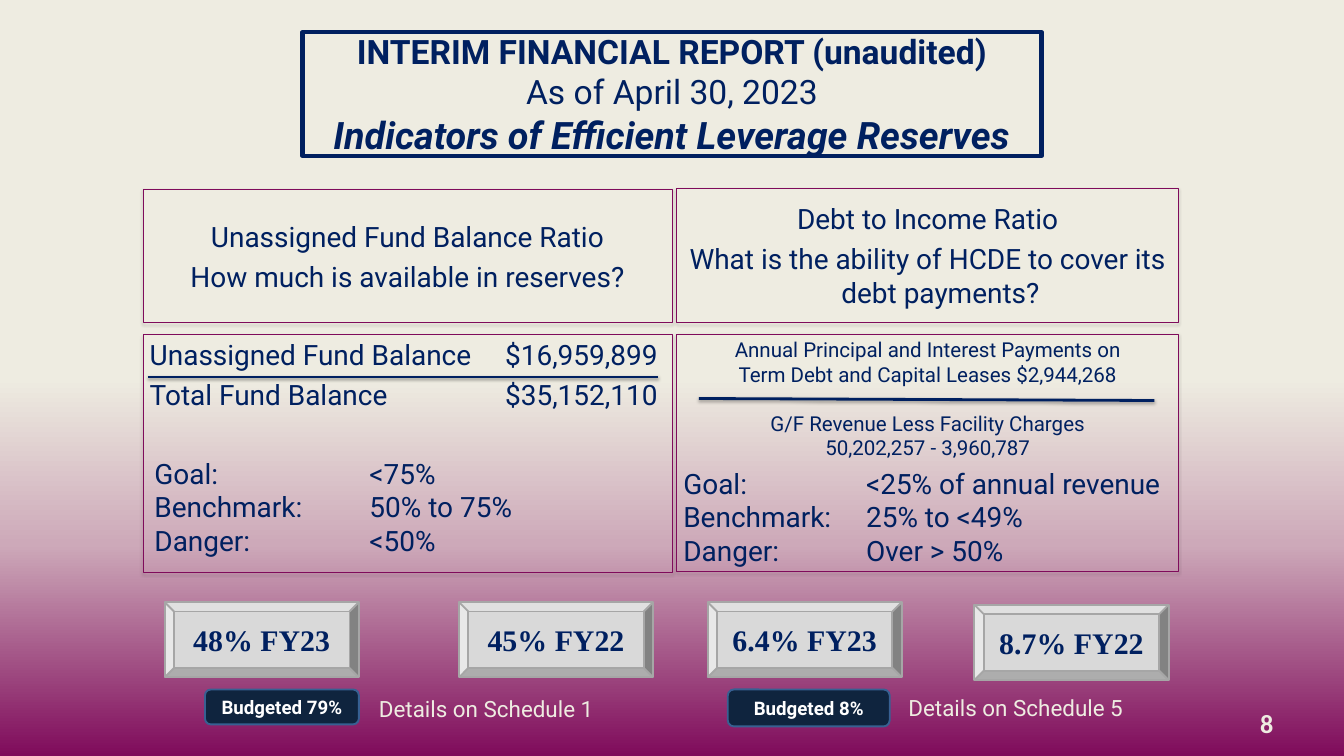
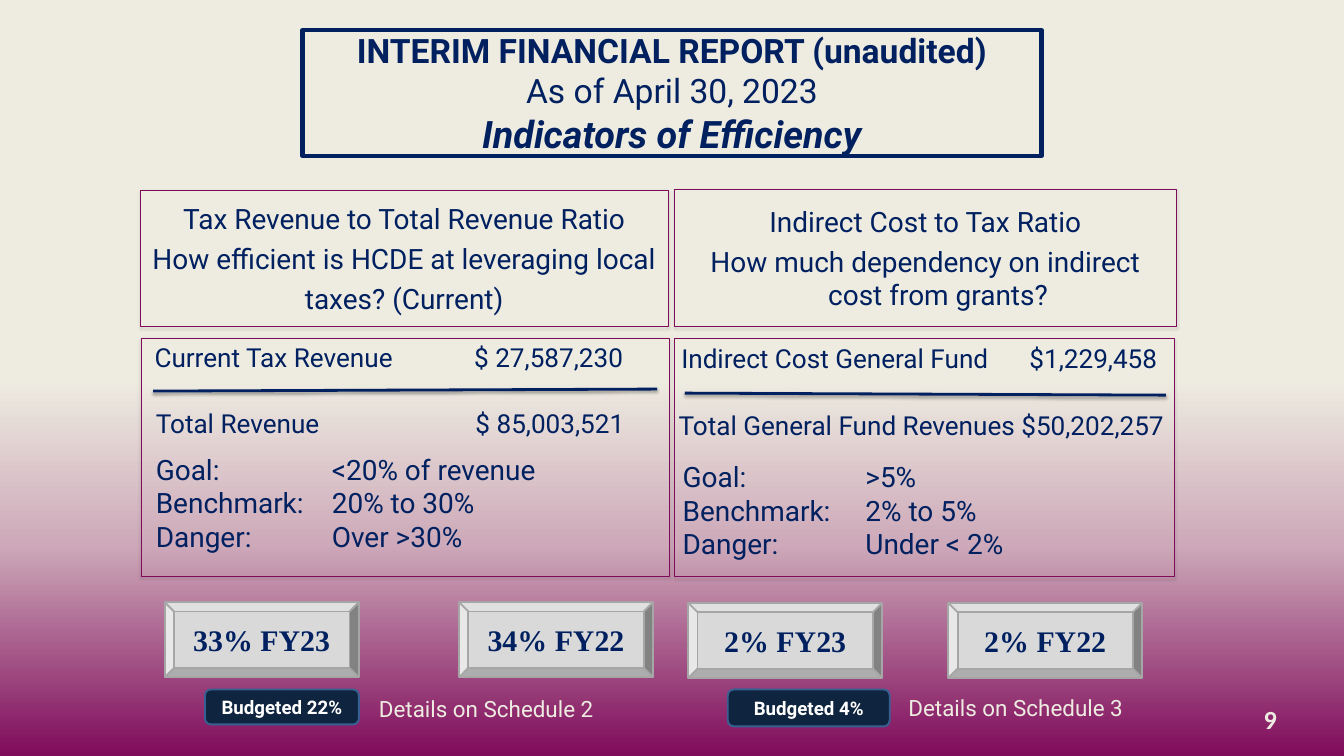
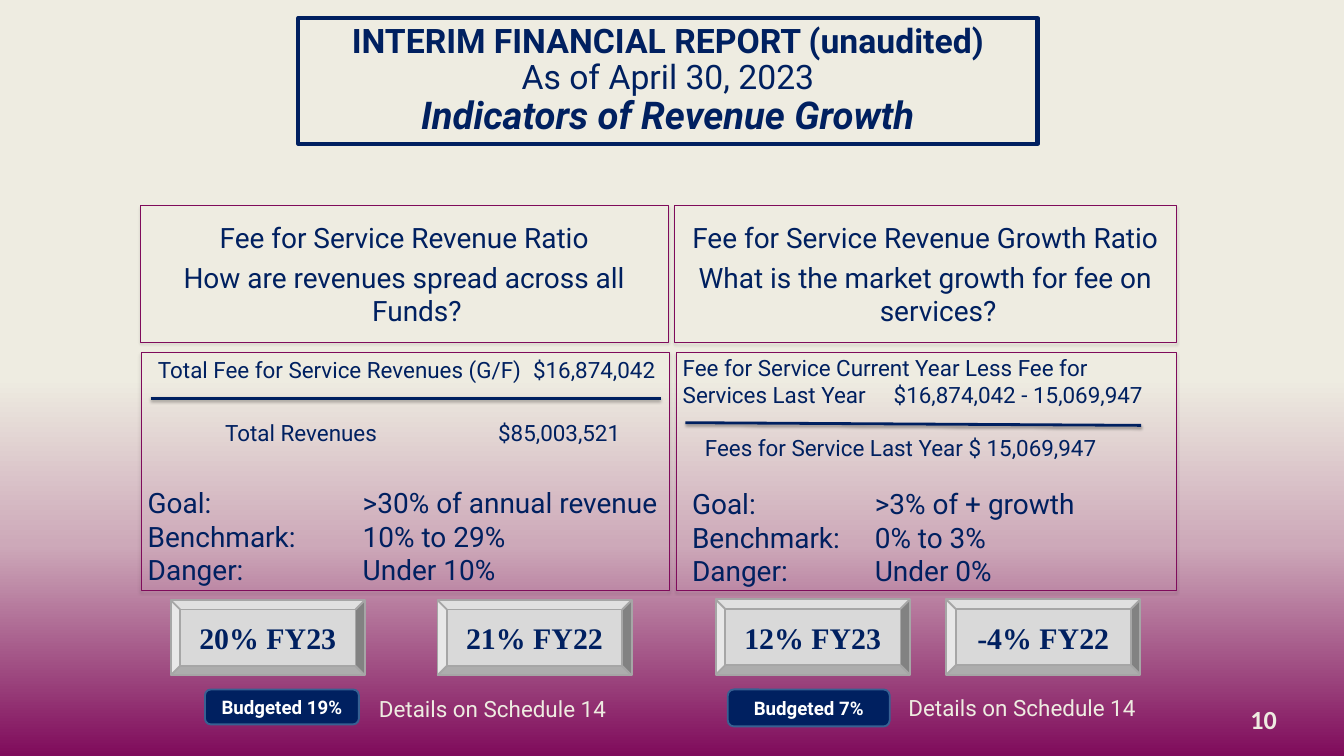
from dataclasses import dataclass

from lxml import etree
from pptx import Presentation
from pptx.dml.color import RGBColor
from pptx.enum.shapes import MSO_CONNECTOR, MSO_SHAPE
from pptx.enum.text import MSO_ANCHOR, MSO_AUTO_SIZE, PP_ALIGN
from pptx.oxml import parse_xml
from pptx.oxml.ns import qn
from pptx.util import Inches, Pt

RECT, BEVEL, ROUNDED = MSO_SHAPE.RECTANGLE, MSO_SHAPE.BEVEL, MSO_SHAPE.ROUNDED_RECTANGLE
STRAIGHT = MSO_CONNECTOR.STRAIGHT
LEFT, CENTER, RIGHT = PP_ALIGN.LEFT, PP_ALIGN.CENTER, PP_ALIGN.RIGHT
TOP, MIDDLE = MSO_ANCHOR.TOP, MSO_ANCHOR.MIDDLE

NAVY, CREAM, PLUM, WHITE = "002060", "EEECE1", "7F0B5B", "FFFFFF"
SILVER, GRAY, INK, STEEL = "D9D9D9", "A6A6A6", "0F243E", "376092"
BACKDROP = [(50, CREAM), (72, "CDA9B9"), (100, PLUM)]
SOFT_SHADOW = (35, 3.1, 1.8)  # opacity, blur, distance
DRAWING = "http://schemas.openxmlformats.org/drawingml/2006/main"
ROW_GAP = 6.5


@dataclass
class Row:
    text: str
    tabs: tuple = ()  # (position in inches, "l" or "r")
    before: float = 0


@dataclass
class Column:
    head: tuple
    questions: list
    body: tuple
    fraction: list
    rule: tuple  # both ends, relative to the body
    goals_at: tuple  # relative to the body
    goals: list
    goal_tab: float
    size: float = 30
    align: int = LEFT
    inset: float = 0.1
    note_at: tuple = ()  # relative to the body
    note: tuple = ()
    note_size: float = 28
    note_inset: float = 0.1


# ---- shared helpers ----
def color(hex_text):
    return RGBColor.from_string(hex_text)


def inches(values):
    return [Inches(value) for value in values]


def add_shadow(shape, shadow=None):
    """Give the shape this shadow, or an empty effect list."""
    effects = etree.SubElement(shape._element.spPr, qn("a:effectLst"))
    if shadow:
        opacity, blur, distance = shadow
        effects.append(parse_xml(
            f'<a:outerShdw xmlns:a="{DRAWING}" blurRad="{Pt(blur)}" dist="{Pt(distance)}" '
            f'dir="5400000" rotWithShape="0"><a:srgbClr val="000000">'
            f'<a:alpha val="{opacity * 1000}"/></a:srgbClr></a:outerShdw>'))


def set_line(shape, hex_text, width):
    shape.line.color.rgb = color(hex_text)
    shape.line.width = Pt(width)


def set_tabs(para, tabs):
    if tabs:
        tab_list = etree.SubElement(para._p.get_or_add_pPr(), qn("a:tabLst"))
        for position, side in tabs:
            etree.SubElement(tab_list, qn("a:tab"), pos=str(Inches(position)), algn=side)


def style_runs(para, size, hex_text=NAVY, bold=False, italic=False, font="Roboto"):
    for span in para.runs:
        span.font.name, span.font.size = font, Pt(size)
        span.font.bold, span.font.italic = bold, italic
        span.font.color.rgb = color(hex_text)


def write_rows(shape, rows, size, align=LEFT, anchor=TOP, inset=0.1, **style):
    frame = shape.text_frame
    frame.word_wrap, frame.vertical_anchor = True, anchor
    frame.margin_left = Inches(inset)
    frame.text = "\n".join(row.text for row in rows)
    for para, row in zip(frame.paragraphs, rows):
        para.alignment = align
        para.space_before = Pt(row.before)
        set_tabs(para, row.tabs)
        style_runs(para, size, **style)


def add_text(page, box, rows, size, **style):
    shape = page.shapes.add_textbox(*inches(box))
    write_rows(shape, rows, size, **style)
    return shape


def add_button(page, kind, box, text, size, fill, line, **style):
    shape = page.shapes.add_shape(kind, *inches(box))
    shape.fill.solid()
    shape.fill.fore_color.rgb = color(fill)
    set_line(shape, line, 2)
    add_shadow(shape)
    write_rows(shape, [Row(text)], size, align=CENTER, anchor=MIDDLE, bold=True, **style)


# ---- regions of a page ----
def paint_background(page):
    fill = page.background.fill
    fill.gradient()
    gradient = page.background._cSld.find(".//" + qn("a:gradFill"))
    stops = "".join(f'<a:gs pos="{place * 1000}"><a:srgbClr val="{tint}"/></a:gs>'
                    for place, tint in BACKDROP)
    gradient.getparent().replace(gradient, parse_xml(
        f'<a:gradFill xmlns:a="{DRAWING}" rotWithShape="1"><a:gsLst>{stops}</a:gsLst>'
        f'<a:lin ang="5400000" scaled="0"/></a:gradFill>'))


def draw_title(page, box, topic, sizes=(36, 40.5), spacing=1, fill=None):
    title = page.shapes.title
    title.left, title.top, title.width, title.height = inches(box)
    set_line(title, NAVY, 4.5)
    if fill:
        title.fill.solid()
        title.fill.fore_color.rgb = color(fill)
    frame = title.text_frame
    frame.text = f"INTERIM FINANCIAL REPORT (unaudited)\nAs of April 30, 2023\n{topic}"
    frame.auto_size, frame.vertical_anchor = MSO_AUTO_SIZE.NONE, MIDDLE
    frame.margin_left = frame.margin_right = frame.margin_top = frame.margin_bottom = 0
    small, large = sizes
    report, date, subject = frame.paragraphs
    style_runs(report, small, bold=True)
    style_runs(date, small)
    style_runs(subject, large, bold=True, italic=True)
    for para in frame.paragraphs:
        para.alignment, para.line_spacing = CENTER, spacing


def draw_panel(page, box):
    panel = page.shapes.add_shape(RECT, *inches(box))
    panel._element.set("useBgFill", "1")
    set_line(panel, PLUM, 0.75)
    add_shadow(panel, SOFT_SHADOW)
    return panel


def draw_column(page, column):
    # Ratio and its question
    head = draw_panel(page, column.head)
    rows = [Row(text, before=ROW_GAP if index else 0)
            for index, text in enumerate(column.questions)]
    write_rows(head, rows, 30, align=CENTER, anchor=MIDDLE)
    for para in head.text_frame.paragraphs:
        para._p.pPr.set("marL", str(Inches(0.38)))
        para._p.pPr.set("indent", str(Inches(-0.38)))

    # Fraction with its dividing rule
    body = draw_panel(page, column.body)
    left, top = column.body[:2]
    if column.fraction:
        write_rows(body, column.fraction, column.size, align=column.align, inset=column.inset)
    if column.note:
        dx, dy, width, height = column.note_at
        add_text(page, (left + dx, top + dy, width, height), column.note,
                 column.note_size, inset=column.note_inset)
    x1, y1, x2, y2 = column.rule
    rule = page.shapes.add_connector(
        STRAIGHT, *inches((left + x1, top + y1, left + x2, top + y2)))
    set_line(rule, NAVY, 3)
    add_shadow(rule, SOFT_SHADOW)

    # Goal, benchmark and danger levels
    dx, dy = column.goals_at
    labels = ("Goal:", "Benchmark:", "Danger:")
    rows = [Row(f"{label}\t{level}", ((column.goal_tab, "l"),))
            for label, level in zip(labels, column.goals)]
    add_text(page, (left + dx, top + dy, 7.87, 1.62), rows, 30)


def draw_results(page, places, results):
    for (left, top), result in zip(places, results):
        add_button(page, BEVEL, (left, top, 2.89, 1.12), result, 32, SILVER, GRAY,
                   font="Times New Roman")


def draw_footer(page, budgets, schedules, number, number_at, fill):
    badge_boxes = [(3.05, 10.26, 2.29, 0.52), (10.83, 10.26, 2.41, 0.55)]
    detail_boxes = [(5.54, 10.3, 3.88, 0.5), (13.42, 10.28, 3.83, 0.5)]
    for badge, detail, budget, schedule in zip(badge_boxes, detail_boxes, budgets, schedules):
        add_button(page, ROUNDED, badge, f"Budgeted {budget}", 20, fill, STEEL, hex_text=WHITE)
        add_text(page, detail, [Row(f"Details on Schedule {schedule}")], 24, hex_text=CREAM)
    box = add_text(page, (*number_at, 0.42, 0.47), [Row(str(number))], 28, align=RIGHT,
                   inset=0, hex_text=CREAM, bold=True, font="Calibri")
    frame = box.text_frame
    frame.margin_right = frame.margin_top = frame.margin_bottom = 0


def build_page(deck, title, columns, places, results, footer):
    page = deck.slides.add_slide(deck.slide_layouts[5])
    paint_background(page)
    draw_title(page, **title)
    for column in columns:
        draw_column(page, column)
    draw_results(page, places, results)
    draw_footer(page, **footer)


# ---- content of the pages ----
RESERVES = dict(
    title=dict(box=(4.5, 0.48, 11, 1.84), topic="Indicators of Efficient Leverage Reserves"),
    columns=[
        Column(head=(2.13, 2.82, 7.87, 1.98),
               questions=["Unassigned Fund Balance Ratio", "How much is available in reserves?"],
               body=(2.13, 4.98, 7.87, 3.54),
               fraction=[Row("Unassigned Fund Balance\t$16,959,899", ((7.56, "r"),)),
                         Row("Total Fund Balance\t$35,152,110", ((7.56, "r"),), ROW_GAP)],
               rule=(0.07, 0.63, 7.66, 0.63), goals_at=(0.07, 1.76), goal_tab=3.2,
               goals=["<75%", "50% to 75%", "<50%"]),
        Column(head=(10.07, 2.8, 7.47, 2),
               questions=["Debt to Income Ratio",
                          "What is the ability of HCDE to cover its debt payments?"],
               body=(10.07, 4.97, 7.47, 3.54), size=22, align=CENTER,
               fraction=[Row("Annual Principal and Interest Payments on"),
                         Row("Term Debt and Capital Leases $2,944,268"),
                         Row("G/F Revenue Less Facility Charges", before=26),
                         Row("50,202,257 - 3,960,787")],
               rule=(0.33, 0.96, 7.11, 0.99), goals_at=(0, 1.92), goal_tab=2.72,
               goals=["<25% of annual revenue", "25% to <49%", "Over > 50%"]),
    ],
    places=[(2.45, 8.96), (6.83, 8.96), (10.53, 8.96), (14.5, 9)],
    results=["48% FY23", "45% FY22", "6.4% FY23", "8.7% FY22"],
    footer=dict(budgets=["79%", "8%"], schedules=[1, 5], number=8,
                number_at=(18.53, 10.52), fill=INK))

EFFICIENCY = dict(
    title=dict(box=(4.5, 0.45, 11, 1.87), topic="Indicators of Efficiency"),
    columns=[
        Column(head=(2.09, 2.83, 7.85, 2.03),
               questions=["Tax Revenue to Total Revenue Ratio",
                          "How efficient is HCDE at leveraging local", "taxes? (Current)"],
               body=(2.1, 5.03, 7.86, 3.54), size=28, inset=0.2,
               fraction=[Row("Current Tax Revenue\t$ 27,587,230", ((6.97, "r"),))],
               note_at=(0.12, 0.99, 7.59, 0.57),
               note=(Row("Total Revenue\t$ 85,003,521", ((6.97, "r"),)),),
               rule=(0.18, 0.79, 7.68, 0.76), goals_at=(0.12, 1.65), goal_tab=2.62,
               goals=["<20% of revenue", "20% to 30%", "Over >30%"]),
        Column(head=(10.04, 2.82, 7.46, 2.04),
               questions=["Indirect Cost to Tax Ratio",
                          "How much dependency on indirect cost from grants?"],
               body=(10.04, 5.04, 7.44, 3.54), size=28,
               fraction=[Row("Indirect Cost General Fund\t$1,229,458", ((7.08, "r"),))],
               note_at=(-0.04, 1.01, 7.67, 0.57),
               note=(Row("Total General Fund Revenues $50,202,257"),),
               rule=(0.15, 0.81, 7.31, 0.84), goals_at=(0.02, 1.75), goal_tab=2.72,
               goals=[">5%", "2% to 5%", "Under < 2%"]),
    ],
    places=[(2.45, 8.96), (6.83, 8.96), (10.24, 8.97), (14.11, 8.97)],
    results=["33% FY23", "34% FY22", "2% FY23", "2% FY22"],
    footer=dict(budgets=["22%", "4%"], schedules=[2, 3], number=9,
                number_at=(18.58, 10.46), fill=INK))

GROWTH = dict(
    title=dict(box=(4.44, 0.27, 11, 1.87), topic="Indicators of Revenue Growth",
               sizes=(36.1, 41), spacing=0.9, fill=CREAM),
    columns=[
        Column(head=(2.09, 3.06, 7.85, 2.03),
               questions=["Fee for Service Revenue Ratio",
                          "How are revenues spread across all Funds?"],
               body=(2.1, 5.25, 7.86, 3.54), size=24, inset=0.25,
               fraction=[Row("Total Fee for Service Revenues (G/F)\t$16,874,042",
                             ((7.4, "r"),)),
                         Row("\tTotal Revenues\t$85,003,521", ((1, "l"), (6.88, "r")), 39)],
               rule=(0.14, 0.68, 7.73, 0.68), goals_at=(0, 1.93), goal_tab=3.2,
               goals=[">30% of annual revenue", "10% to 29%", "Under 10%"]),
        Column(head=(10.04, 3.06, 7.46, 2.04),
               questions=["Fee for Service Revenue Growth Ratio",
                          "What is the market growth for fee on services?"],
               body=(10.06, 5.25, 7.44, 3.54), fraction=[],
               note_at=(-0.1, -0.03, 7.54, 1.72), note_size=24, note_inset=0.2,
               note=(Row("Fee for Service Current Year Less Fee for Services Last Year"
                         "\t$16,874,042 - 15,069,947", ((3.14, "l"),)),
                     Row("\tFees for Service Last Year $ 15,069,947", ((0.33, "l"),), 28)),
               rule=(0.14, 1.04, 6.92, 1.08), goals_at=(0.14, 1.94), goal_tab=2.72,
               goals=[">3% of + growth", "0% to 3%", "Under 0%"]),
    ],
    places=[(2.54, 8.93), (6.51, 8.93), (10.65, 8.92), (14.08, 8.92)],
    results=["20% FY23", "21% FY22", "12% FY23", "-4% FY22"],
    footer=dict(budgets=["19%", "7%"], schedules=[14, 14], number=10,
                number_at=(18.58, 10.46), fill=NAVY))


def main():
    deck = Presentation()
    deck.slide_width, deck.slide_height = inches((20, 11.25))
    for content in (RESERVES, EFFICIENCY, GROWTH):
        build_page(deck, **content)
    deck.save("out.pptx")


if __name__ == "__main__":
    main()
